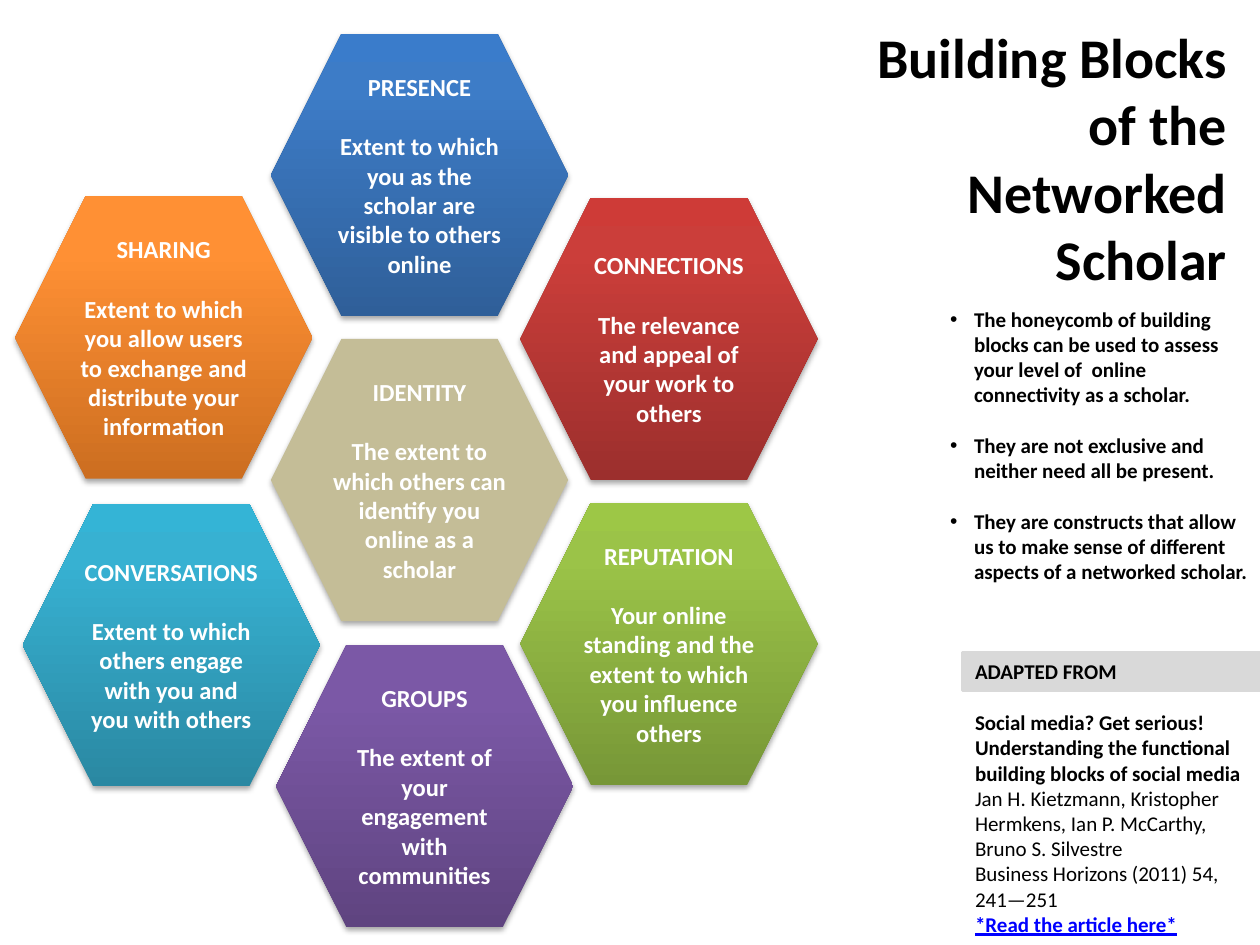
import pptx
import pptx.util
import pptx.oxml
import pptx.oxml.ns
import pptx.dml.color
import pptx.enum.shapes
import pptx.enum.text
from lxml import etree

Inches = pptx.util.Inches
Pt = pptx.util.Pt
ALIGN = pptx.enum.text.PP_ALIGN
ANCHOR = pptx.enum.text.MSO_ANCHOR
SHAPE = pptx.enum.shapes.MSO_SHAPE

FONT = "Calibri"
COLORS = {
    "text": "000000",
    "white": "FFFFFF",
    "band": "D9D9D9",
    "link": "0000FF",
    "identity": "C4BD97",
}
HEX_WIDTH, HEX_HEIGHT = 2.36, 2.24
BLOCKS = [
    ("PRESENCE", "Extent to which you as the scholar are visible to others online",
     2.15, 0.27, ("2F5F99", "3D7CC7", "3A7CCB")),
    ("GROUPS", "The extent of your engagement with communities",
     2.19, 5.12, ("5F4480", "7B58A6", "7C57A8")),
    ("SHARING", "Extent to which you allow users to exchange and distribute your information",
     0.12, 1.56, ("CC6E20", "FF9034", "FF9136")),
    ("IDENTITY", "The extent to which others can identify you online as a scholar",
     2.15, 2.69, (COLORS["identity"],)),
    ("CONNECTIONS", "The relevance and appeal of your work to others",
     4.13, 1.57, ("9C2F2D", "CB3E3A", "CE3B37")),
    ("CONVERSATIONS", "Extent to which others engage with you and you with others",
     0.18, 4.0, ("2A88A2", "37B1D2", "34B4D6")),
    ("REPUTATION", "Your online standing and the extent to which you influence others",
     4.13, 3.99, ("779737", "9BC348", "9DC746")),
]
NOTES = [
    "The honeycomb of building blocks can be used to assess your level of  online connectivity as a scholar.",
    "They are not exclusive and neither need all be present.",
    "They are constructs that allow us to make sense of different aspects of a networked scholar.",
]
CITATION = [
    ("ADAPTED FROM", True),
    ("Social media? Get serious! Understanding the functional building blocks of social media", True),
    ("Jan H. Kietzmann, Kristopher Hermkens, Ian P. McCarthy, Bruno S. Silvestre", False),
    ("Business Horizons (2011) 54, 241—251", False),
]


def rgb(value):
    return pptx.dml.color.RGBColor.from_string(value)


def box(left, top, width, height):
    return Inches(left), Inches(top), Inches(width), Inches(height)


def place(placeholder, left, top, width, height):
    placeholder.left, placeholder.top, placeholder.width, placeholder.height = box(
        left, top, width, height)
    prepare_frame(placeholder.text_frame, ANCHOR.TOP)
    return placeholder.text_frame


def prepare_frame(frame, anchor):
    frame.word_wrap = True
    frame.auto_size = pptx.enum.text.MSO_AUTO_SIZE.NONE
    frame.vertical_anchor = anchor


def next_paragraph(frame, index, align, gap=0):
    paragraph = frame.add_paragraph() if index else frame.paragraphs[0]
    paragraph.alignment = align
    paragraph.space_before = Pt(gap if index else 0)
    return paragraph


def add_run(paragraph, text, size, color=COLORS["text"], bold=True, underline=None):
    run = paragraph.add_run()
    run.text = text
    run.font.name = FONT
    run.font.size = Pt(size)
    run.font.bold = bold
    run.font.underline = underline
    run.font.color.rgb = rgb(color)


def set_bullet(paragraph, indent):
    properties = paragraph._p.get_or_add_pPr()
    properties.set("marL", str(Inches(indent)))
    properties.set("indent", str(-Inches(indent)))
    for tag, name, value in (("a:buFont", "typeface", "Arial"), ("a:buChar", "char", "•")):
        etree.SubElement(properties, pptx.oxml.ns.qn(tag)).set(name, value)


def set_gradient(shape, stops):
    stop_xml = "".join(
        f'<a:gs pos="{position * 1000}"><a:srgbClr val="{color}"/></a:gs>'
        for position, color in zip((0, 80, 100), stops))
    gradient = pptx.oxml.parse_xml(
        f'<a:gradFill {pptx.oxml.ns.nsdecls("a")} rotWithShape="1"><a:gsLst>{stop_xml}</a:gsLst>'
        '<a:lin ang="16200000" scaled="0"/></a:gradFill>')
    geometry = shape._element.spPr.find(pptx.oxml.ns.qn("a:prstGeom"))
    geometry.addnext(gradient)


def set_shadow(shape):
    shape.shadow.inherit = False
    effects = shape._element.spPr.find(pptx.oxml.ns.qn("a:effectLst"))
    effects.append(pptx.oxml.parse_xml(
        f'<a:outerShdw {pptx.oxml.ns.nsdecls("a")} blurRad="{Pt(3.1)}" dist="{Pt(1.8)}" '
        'dir="5400000" rotWithShape="0"><a:srgbClr val="000000">'
        '<a:alpha val="35000"/></a:srgbClr></a:outerShdw>'))


def add_block(slide, heading, meaning, left, top, fill):
    block = slide.shapes.add_shape(SHAPE.HEXAGON, *box(left, top, HEX_WIDTH, HEX_HEIGHT))
    if len(fill) == 1:
        block.fill.solid()
        block.fill.fore_color.rgb = rgb(fill[0])
    else:
        set_gradient(block, fill)
    block.line.fill.background()
    set_shadow(block)
    prepare_frame(block.text_frame, ANCHOR.MIDDLE)
    for index, text in enumerate((heading, meaning)):
        paragraph = next_paragraph(block.text_frame, index, ALIGN.CENTER, 17)
        add_run(paragraph, text, 14, COLORS["white"])


def add_band(slide):
    band = slide.shapes.add_shape(SHAPE.RECTANGLE, *box(7.64, 5.18, 2.36, 0.3))
    band.shadow.inherit = False
    band.fill.solid()
    band.fill.fore_color.rgb = rgb(COLORS["band"])
    band.line.color.rgb = rgb(COLORS["band"])
    band.line.width = Pt(2)


def add_citation(slide):
    frame = slide.shapes.add_textbox(*box(7.64, 5.18, 2.36, 2.32)).text_frame
    prepare_frame(frame, ANCHOR.TOP)
    for index, (text, bold) in enumerate(CITATION):
        paragraph = next_paragraph(frame, index, ALIGN.LEFT, 14.6 if index == 1 else 0)
        add_run(paragraph, text, 12, bold=bold)
    pointer = next_paragraph(frame, len(CITATION), ALIGN.LEFT)
    add_run(pointer, "*Read the article here*", 12, COLORS["link"], underline=True)


def fill_title(slide):
    frame = place(slide.shapes.title, 6.73, 0.13, 3.11, 2.26)
    paragraph = next_paragraph(frame, 0, ALIGN.RIGHT)
    add_run(paragraph, "Building Blocks of the Networked Scholar", 32)


def fill_notes(slide):
    frame = place(slide.placeholders[1], 7.44, 2.38, 2.56, 2.52)
    for index, text in enumerate(NOTES):
        paragraph = next_paragraph(frame, index, ALIGN.LEFT, 14.6)
        set_bullet(paragraph, 0.19)
        add_run(paragraph, text, 12)


def main():
    deck = pptx.Presentation()
    deck.slide_width, deck.slide_height = Inches(10), Inches(7.5)
    slide = deck.slides.add_slide(deck.slide_layouts[1])
    add_band(slide)
    for block in BLOCKS:
        add_block(slide, *block)
    fill_title(slide)
    add_citation(slide)
    fill_notes(slide)
    deck.save("out.pptx")


if __name__ == "__main__":
    main()
